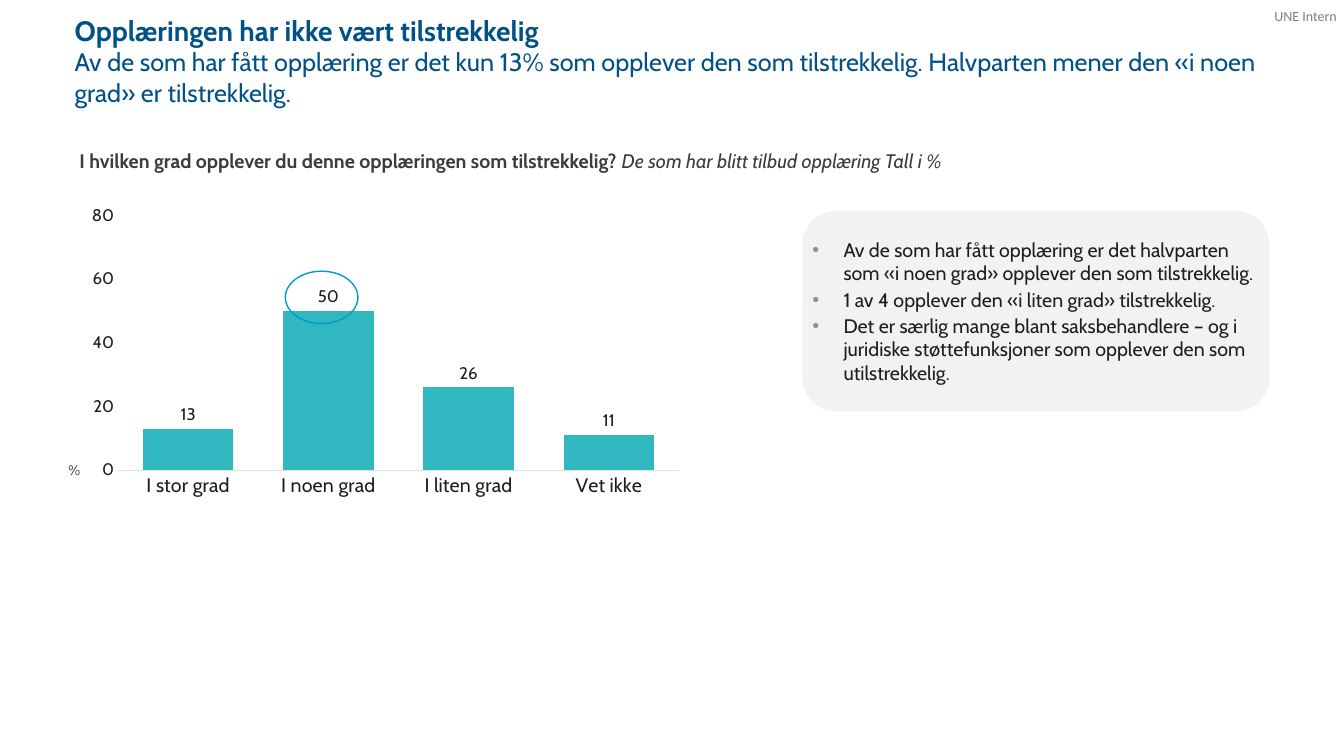
"""Build the slide on how sufficient respondents find the training."""
from lxml.etree import SubElement
from pptx import Presentation
from pptx.chart.data import CategoryChartData
from pptx.dml.color import RGBColor
from pptx.enum.chart import XL_CHART_TYPE, XL_LABEL_POSITION, XL_TICK_MARK
from pptx.enum.shapes import MSO_SHAPE
from pptx.enum.text import MSO_ANCHOR, MSO_AUTO_SIZE, PP_ALIGN
from pptx.oxml import parse_xml
from pptx.oxml.ns import nsdecls, qn
from pptx.util import Inches, Pt

FONT = "Cabin"
INK, GREY, BLUE = "1E1E1E", "3C3C3C", "005187"
TITLE = [
    ("Opplæringen har ikke vært tilstrekkelig", 20, True),
    ("Av de som har fått opplæring er det kun 13% som opplever den som tilstrekkelig. "
     "Halvparten mener den «i noen grad» er tilstrekkelig.", 18, False),
]
QUESTION = "I hvilken grad opplever du denne opplæringen som tilstrekkelig? "
QUESTION_BASE = "De som har blitt tilbud opplæring Tall i %"
ANSWERS = {"I stor grad": 13, "I noen grad": 50, "I liten grad": 26, "Vet ikke": 11}
FINDINGS = [
    "Av de som har fått opplæring er det halvparten som «i noen grad» opplever den "
    "som tilstrekkelig.",
    "1 av 4 opplever den «i liten grad» tilstrekkelig.",
    "Det er særlig mange blant saksbehandlere – og i juridiske støttefunksjoner som "
    "opplever den som utilstrekkelig.",
]
PLOT_LAYOUT = {"x": 0.066, "y": 0.066, "w": 0.915, "h": 0.805}


def color(value):
    return RGBColor.from_string(value)


def set_font(font, size, value, bold=None, name=FONT):
    font.name, font.size, font.bold = name, Pt(size), bold
    font.color.rgb = color(value)


def place(left, top, width, height):
    return [Inches(length) for length in (left, top, width, height)]


def set_margins(frame, margin):
    frame.margin_left = frame.margin_right = Inches(margin)
    frame.margin_top = frame.margin_bottom = Inches(margin)


def add_label(slide, bounds, text, size, value, name=FONT, margin=None):
    box = slide.shapes.add_textbox(*place(*bounds))
    frame = box.text_frame
    frame.word_wrap = False
    frame.auto_size = MSO_AUTO_SIZE.SHAPE_TO_FIT_TEXT
    if margin is not None:
        set_margins(frame, margin)
    para = frame.paragraphs[0]
    para.add_run().text = text
    set_font(para.font, size, value, name=name)
    return para


def add_title(slide):
    title = slide.shapes.title
    title.left, title.top, title.width, title.height = place(0.64, 0.08, 11.95, 0.68)
    frame = title.text_frame
    frame.word_wrap = True
    frame.auto_size = MSO_AUTO_SIZE.NONE
    frame.vertical_anchor = MSO_ANCHOR.TOP
    for index, (text, size, bold) in enumerate(TITLE):
        para = frame.add_paragraph() if index else frame.paragraphs[0]
        para.text = text
        para.alignment = PP_ALIGN.LEFT
        para.line_spacing = 1.0
        para.space_before = Pt(0)
        set_font(para.font, size, BLUE, bold)


def add_answer_chart(slide):
    data = CategoryChartData()
    data.categories = list(ANSWERS)
    data.add_series("Series 1", list(ANSWERS.values()))
    chart = slide.shapes.add_chart(
        XL_CHART_TYPE.COLUMN_CLUSTERED, *place(0.77, 1.93, 6.08, 3.14), data).chart
    chart.has_legend = chart.has_title = False
    set_font(chart.font, 10, INK)

    categories, values = chart.category_axis, chart.value_axis
    for axis, size in ((categories, 14), (values, 12)):
        axis.major_tick_mark = axis.minor_tick_mark = XL_TICK_MARK.NONE
        axis.has_major_gridlines = False
        set_font(axis.tick_labels.font, size, INK)
    categories.format.line.color.rgb = color("E2E2E2")
    categories.format.line.width = Pt(0.75)
    values.format.line.fill.background()
    values.minimum_scale, values.maximum_scale, values.major_unit = 0, 80, 20

    plot = chart.plots[0]
    plot.gap_width = 55
    plot.vary_by_categories = False
    fill = plot.series[0].format.fill
    fill.solid()
    fill.fore_color.rgb = color("30B7C0")
    plot.has_data_labels = True
    labels = plot.data_labels
    labels.show_value = True
    labels.position = XL_LABEL_POSITION.OUTSIDE_END
    set_font(labels.font, 12, INK)

    area = chart.element.find(".//" + qn("c:plotArea"))
    for old in area.findall(qn("c:layout")):
        area.remove(old)
    layout = parse_xml(f"<c:layout {nsdecls('c')}/>")
    manual = SubElement(layout, qn("c:manualLayout"))
    SubElement(manual, qn("c:layoutTarget")).set("val", "inner")
    for side in "xy":
        SubElement(manual, qn(f"c:{side}Mode")).set("val", "edge")
    for side, share in PLOT_LAYOUT.items():
        SubElement(manual, qn(f"c:{side}")).set("val", str(share))
    area.insert(0, layout)


def add_highlight(slide):
    ring = slide.shapes.add_shape(MSO_SHAPE.OVAL, *place(2.83, 2.69, 0.72, 0.52))
    ring.shadow.inherit = False
    ring.fill.background()
    ring.line.color.rgb = color("009ACB")
    ring.line.width = Pt(1)


def add_bullet(para):
    properties = para._p.get_or_add_pPr()
    properties.set("marL", str(Inches(0.31)))
    properties.set("indent", str(-Inches(0.31)))
    bullet_color = SubElement(properties, qn("a:buClr"))
    SubElement(bullet_color, qn("a:srgbClr")).set("val", "939393")
    SubElement(properties, qn("a:buFont")).set("typeface", "Arial")
    SubElement(properties, qn("a:buChar")).set("char", "•")


def add_findings(slide):
    panel = slide.shapes.add_shape(
        MSO_SHAPE.ROUNDED_RECTANGLE, *place(7.96, 2.09, 4.63, 1.99))
    panel.shadow.inherit = False
    panel.fill.solid()
    panel.fill.fore_color.rgb = color("F2F2F2")
    panel.line.fill.background()
    frame = panel.text_frame
    frame.word_wrap = True
    frame.vertical_anchor = MSO_ANCHOR.MIDDLE
    set_margins(frame, 0)
    for index, text in enumerate(FINDINGS):
        para = frame.add_paragraph() if index else frame.paragraphs[0]
        para.text = text
        add_bullet(para)
        para.alignment = PP_ALIGN.LEFT
        if index:
            para.space_before = Pt(2)
        set_font(para.font, 14, INK)


def main():
    deck = Presentation()
    deck.slide_width, deck.slide_height = Inches(13.33), Inches(7.5)
    slide = deck.slides.add_slide(deck.slide_layouts[5])
    add_title(slide)
    add_label(slide, (12.64, 0.07, 0.65, 0.17), "UNE Intern", 10, "7F7F7F", "Calibri", 0)
    add_answer_chart(slide)
    add_highlight(slide)
    question = add_label(slide, (0.69, 1.43, 9.04, 0.34), QUESTION, 14, GREY)
    question.runs[0].font.bold = True
    base = question.add_run()
    base.text = QUESTION_BASE
    base.font.italic = True
    add_findings(slide)
    add_label(slide, (0.58, 4.53, 0.3, 0.27), "%", 10, GREY)
    deck.save("out.pptx")


if __name__ == "__main__":
    main()
